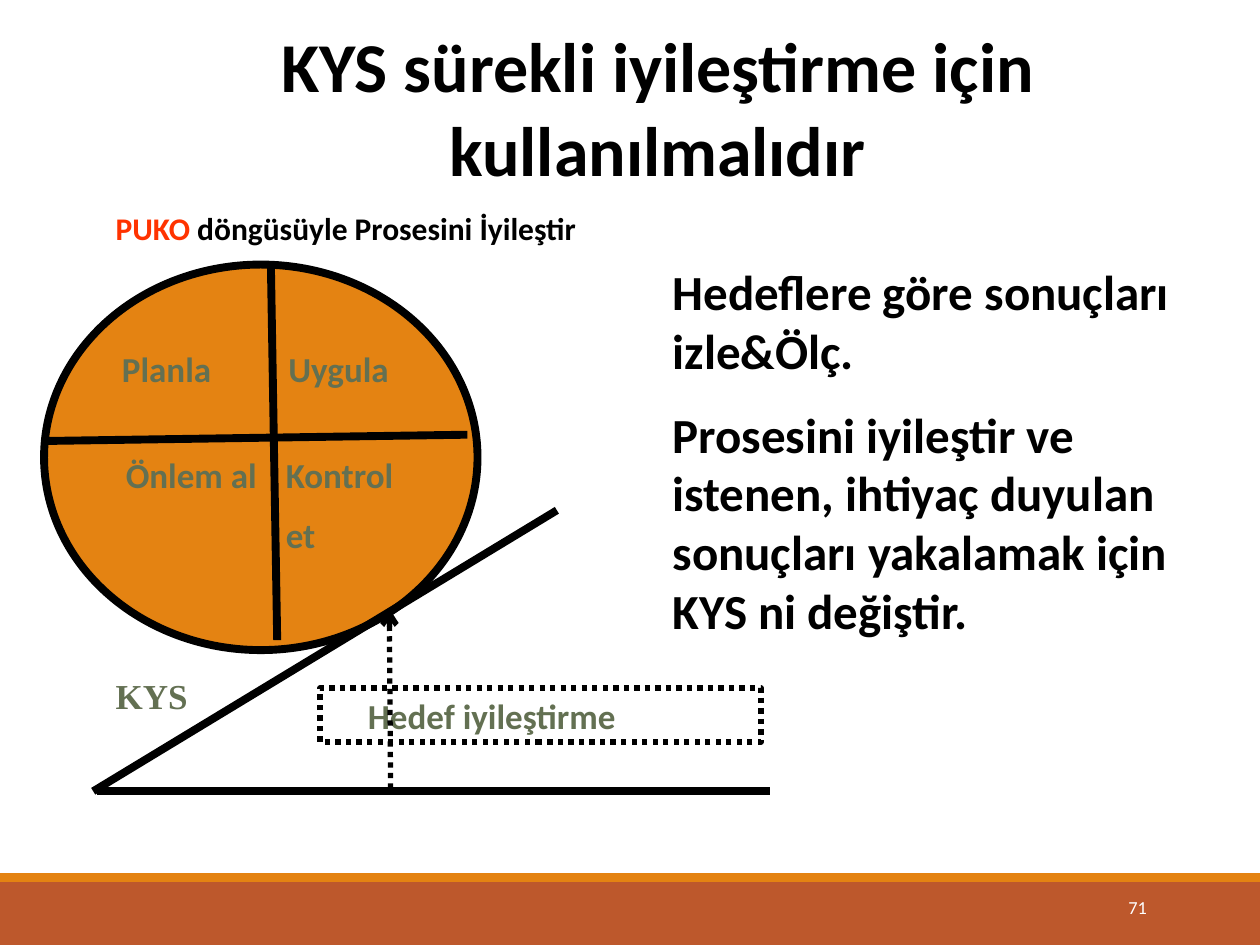
"""Build the slide on continual improvement with the PUKO cycle."""
from lxml import etree
from pptx import Presentation
from pptx import util as u
from pptx.dml.color import RGBColor
from pptx.enum import dml, shapes, text
from pptx.oxml import ns

BLACK = RGBColor(0x00, 0x00, 0x00)
WHITE = RGBColor(0xFF, 0xFF, 0xFF)
ORANGE = RGBColor(0xE4, 0x83, 0x12)
RUST = RGBColor(0xBD, 0x58, 0x2C)
RED = RGBColor(0xFF, 0x33, 0x00)
OLIVE = RGBColor(0x63, 0x70, 0x52)
LEFT, CENTER, RIGHT = text.PP_ALIGN.LEFT, text.PP_ALIGN.CENTER, text.PP_ALIGN.RIGHT
DOTTED = dml.MSO_LINE.ROUND_DOT


def write(sp, paragraphs, size, align=LEFT, font="Calibri", bold=True, inset=0.1, gap=0):
    tf = sp.text_frame
    frame = {"word_wrap": True, "vertical_anchor": text.MSO_ANCHOR.TOP,
             "margin_left": u.Inches(inset), "margin_right": u.Inches(0.1),
             "margin_top": u.Inches(0.05), "margin_bottom": 0}
    for name, value in frame.items():
        setattr(tf, name, value)
    for i, runs in enumerate(paragraphs):
        p = tf.add_paragraph() if i else tf.paragraphs[0]
        p.alignment = align
        if i:
            p.space_before = u.Pt(gap)
        for words, color in runs:
            r = p.add_run()
            r.text = words
            for name, value in {"name": font, "size": u.Pt(size), "bold": bold}.items():
                setattr(r.font, name, value)
            r.font.color.rgb = color


def add_shape(kind, box, fill=None, width=0, dash=None):
    sp = s.shapes.add_shape(kind, *[u.Inches(v) for v in box])
    sp.shadow.inherit = False
    if fill is None:
        sp.fill.background()
    else:
        sp.fill.solid()
        sp.fill.fore_color.rgb = fill
    if width:
        sp.line.color.rgb = BLACK
        sp.line.width = u.Pt(width)
        sp.line.dash_style = dash
    else:
        sp.line.fill.background()
    return sp


prs = Presentation()
prs.slide_width, prs.slide_height = u.Inches(10), u.Inches(7.5)
s = prs.slides.add_slide(prs.slide_layouts[6])

add_shape(shapes.MSO_SHAPE.RECTANGLE, (0, 7, 10, 0.5), RUST)
add_shape(shapes.MSO_SHAPE.RECTANGLE, (0, 6.93, 10, 0.07), ORANGE)
add_shape(shapes.MSO_SHAPE.FLOWCHART_CONNECTOR, (0.35, 2.1, 3.44, 3.06), ORANGE, 4.5)
target = add_shape(shapes.MSO_SHAPE.RECTANGLE, (2.54, 5.46, 3.5, 0.43), None, 3, DOTTED)
write(target, [[("Hedef iyileştirme", OLIVE)]], 20, inset=0.38)

texts = [
    ((0.67, 0.13, 9.1, 1.43), [[("KYS sürekli iyileştirme için kullanılmalıdır", BLACK)]],
     {"size": 40, "align": CENTER}),
    ((0.82, 1.61, 3.87, 0.36),
     [[("PUKO", RED), (" döngüsüyle Prosesini İyileştir", BLACK)]], {"size": 18}),
    ((0.87, 2.71, 1.2, 0.4), [[("Planla", OLIVE)]], {"size": 20}),
    ((2.19, 2.71, 1.3, 0.4), [[("Uygula", OLIVE)]], {"size": 20}),
    ((0.9, 3.55, 1.3, 0.4), [[("Önlem al", OLIVE)]], {"size": 20}),
    ((2.17, 3.55, 1.3, 0.9), [[("Kontrol", OLIVE)], [("et", OLIVE)]],
     {"size": 20, "gap": 10}),
    ((0.82, 5.3, 0.83, 0.38), [[("KYS", OLIVE)]], {"size": 20, "font": "Times New Roman"}),
    ((5.24, 2.03, 4.57, 3.82),
     [[("Hedeflere göre sonuçları izle&Ölç.", BLACK)],
      [("Prosesini iyileştir ve istenen, ihtiyaç duyulan sonuçları yakalamak için "
        "KYS ni değiştir.", BLACK)]], {"size": 28, "gap": 14}),
    ((8.12, 7.06, 1.08, 0.4), [[("71", WHITE)]],
     {"size": 10.5, "align": RIGHT, "bold": False}),
]
for box, paragraphs, style in texts:
    write(s.shapes.add_textbox(*[u.Inches(v) for v in box]), paragraphs, **style)

lines = [
    ((2.15, 2.11, 2.2, 5.08), 4.5, None),
    ((0.35, 3.5, 3.71, 3.45), 4.5, None),
    ((4.42, 4.05, 0.74, 6.28), 4.5, None),
    ((0.77, 6.28, 6.11, 6.28), 4.5, None),
    ((3.09, 4.83, 3.1, 6.25), 3, DOTTED),
]
for ends, width, dash in lines:
    sp = s.shapes.add_connector(shapes.MSO_CONNECTOR.STRAIGHT, *[u.Inches(v) for v in ends])
    sp.line.color.rgb = BLACK
    sp.line.width = u.Pt(width)
    sp.line.dash_style = dash
    if dash:
        etree.SubElement(sp.line._get_or_add_ln(), ns.qn("a:headEnd"), type="arrow")
    etree.SubElement(sp._element.spPr, ns.qn("a:effectLst"))

prs.save("out.pptx")
